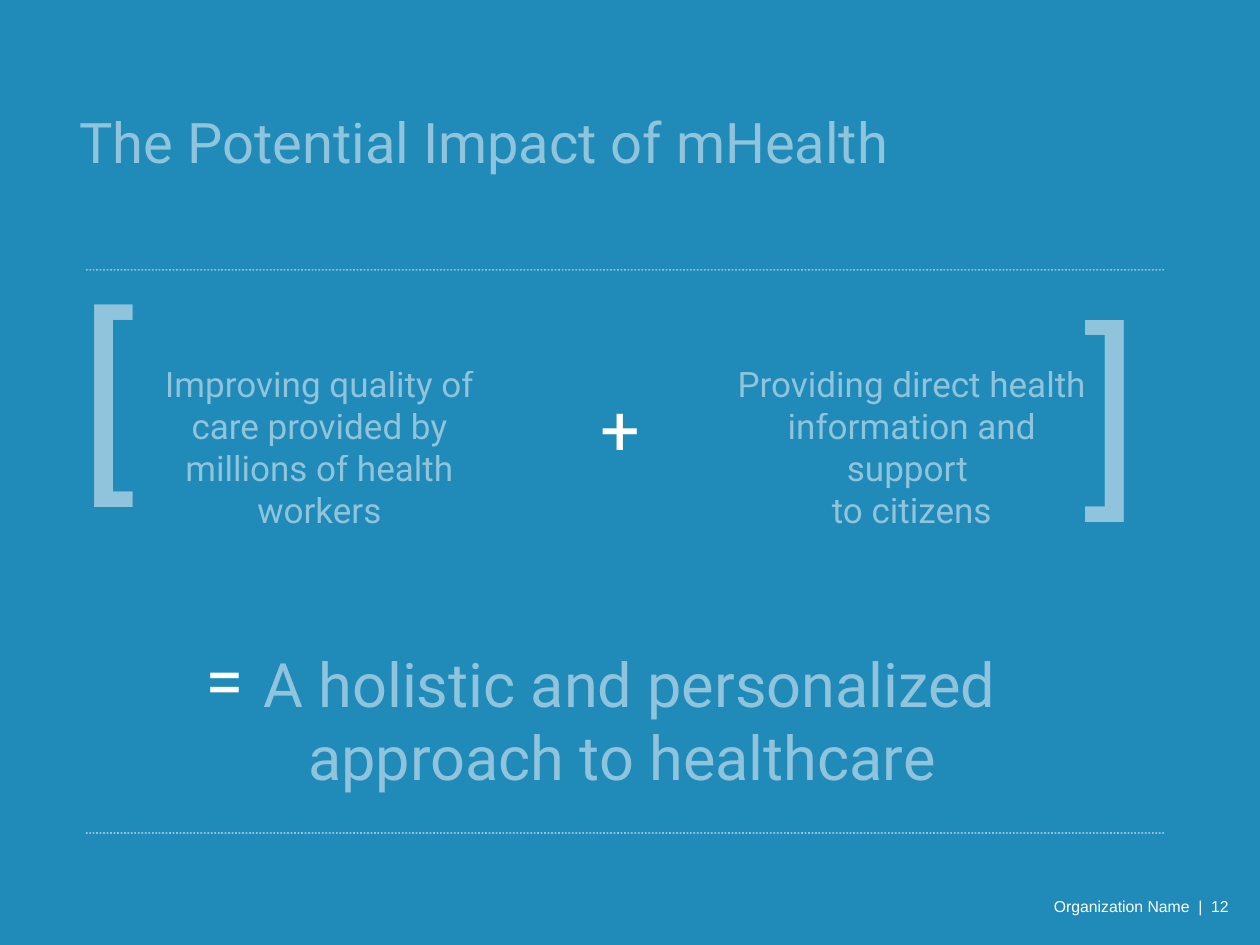
from dataclasses import dataclass
from pptx import Presentation
from pptx.dml.color import RGBColor
from pptx.enum.dml import MSO_LINE
from pptx.enum.shapes import MSO_CONNECTOR, MSO_SHAPE
from pptx.enum.text import MSO_ANCHOR, MSO_AUTO_SIZE, PP_ALIGN
from pptx.oxml.ns import qn
from pptx.util import Cm, Pt
from lxml.etree import SubElement


@dataclass(frozen=True)
class Theme:
    blue: RGBColor = RGBColor(0x20, 0x8A, 0xB9)
    white: RGBColor = RGBColor(0xFF, 0xFF, 0xFF)
    fade: int = 50
    font: str = "Roboto"
    small: str = "Arial"
    title: int = 32
    body: int = 20
    sign: int = 40
    claim: int = 35
    brace: int = 120
    foot: int = 9


@dataclass(frozen=True)
class Label:
    text: str
    left: float
    top: float
    width: float
    height: float
    size: int
    align: PP_ALIGN = PP_ALIGN.CENTER
    faded: bool = True
    font: str = "Roboto"


THEME = Theme()
LEFT, RIGHT = PP_ALIGN.LEFT, PP_ALIGN.RIGHT

TITLE = Label("The Potential Impact of mHealth", 1.35, 2.03, 22.12, 1.63, THEME.title, LEFT)
LABELS = [
    # Footer
    Label("Organization Name  |  12", 20.4, 17.96, 4.62, 0.64, THEME.foot, RIGHT, False, THEME.small),
    # Bracketed sum
    Label("[", 1.35, 5.23, 10, 5.38, THEME.brace, LEFT),
    Label("Improving quality of care provided by millions of health workers",
          2.49, 7.19, 7.9, 3.68, THEME.body),
    Label("+", 10.01, 7.65, 5, 1.96, THEME.sign, faded=False),
    Label("Providing direct health information and support \nto citizens",
          14.43, 7.19, 7.9, 2.82, THEME.body),
    Label("]", 13.23, 5.54, 10, 5.38, THEME.brace, RIGHT),
    # Result
    Label("=", 3.66, 12.7, 1.73, 1.96, THEME.sign, faded=False),
    Label("A holistic and personalized approach to healthcare ",
          3.66, 12.9, 18.08, 3.25, THEME.claim),
]
RULES = (5.44, 16.79)


def fade(node) -> None:
    """Make every colour inside the node half transparent."""
    for color in node.iter(qn("a:srgbClr")):
        SubElement(color, qn("a:alpha")).set("val", str(THEME.fade * 1000))


def write(shape, label: Label) -> None:
    shape.left, shape.top = Cm(label.left), Cm(label.top)
    shape.width, shape.height = Cm(label.width), Cm(label.height)
    frame = shape.text_frame
    frame.text = label.text
    frame.word_wrap = True
    frame.auto_size = MSO_AUTO_SIZE.NONE
    frame.vertical_anchor = MSO_ANCHOR.TOP
    for para in frame.paragraphs:
        para.alignment = label.align
        for run in para.runs:
            run.font.name = label.font
            run.font.size = Pt(label.size)
            run.font.color.rgb = THEME.white
    if label.faded:
        fade(frame._txBody)


def add_label(slide, label: Label) -> None:
    write(slide.shapes.add_textbox(0, 0, 0, 0), label)


def add_rule(slide, top: float) -> None:
    rule = slide.shapes.add_connector(
        MSO_CONNECTOR.STRAIGHT, Cm(1.73), Cm(top), Cm(23.47), Cm(top))
    rule.line.color.rgb = THEME.white
    rule.line.width = Pt(1)
    rule.line.dash_style = MSO_LINE.ROUND_DOT
    fade(rule._element.spPr)
    SubElement(rule._element.spPr, qn("a:effectLst"))


def add_ground(slide, width: int, height: int) -> None:
    ground = slide.shapes.add_shape(MSO_SHAPE.RECTANGLE, 0, 0, width, height)
    ground.shadow.inherit = False
    ground.fill.solid()
    ground.fill.fore_color.rgb = THEME.blue
    ground.line.fill.background()
    # Send behind the title
    slide.shapes._spTree.insert(2, ground._element)


def main() -> None:
    deck = Presentation()
    deck.slide_width, deck.slide_height = Cm(25.4), Cm(19.05)
    slide = deck.slides.add_slide(deck.slide_layouts[5])
    add_ground(slide, deck.slide_width, deck.slide_height)
    write(slide.shapes.title, TITLE)
    for top in RULES:
        add_rule(slide, top)
    for label in LABELS:
        add_label(slide, label)
    deck.save("out.pptx")


if __name__ == "__main__":
    main()
